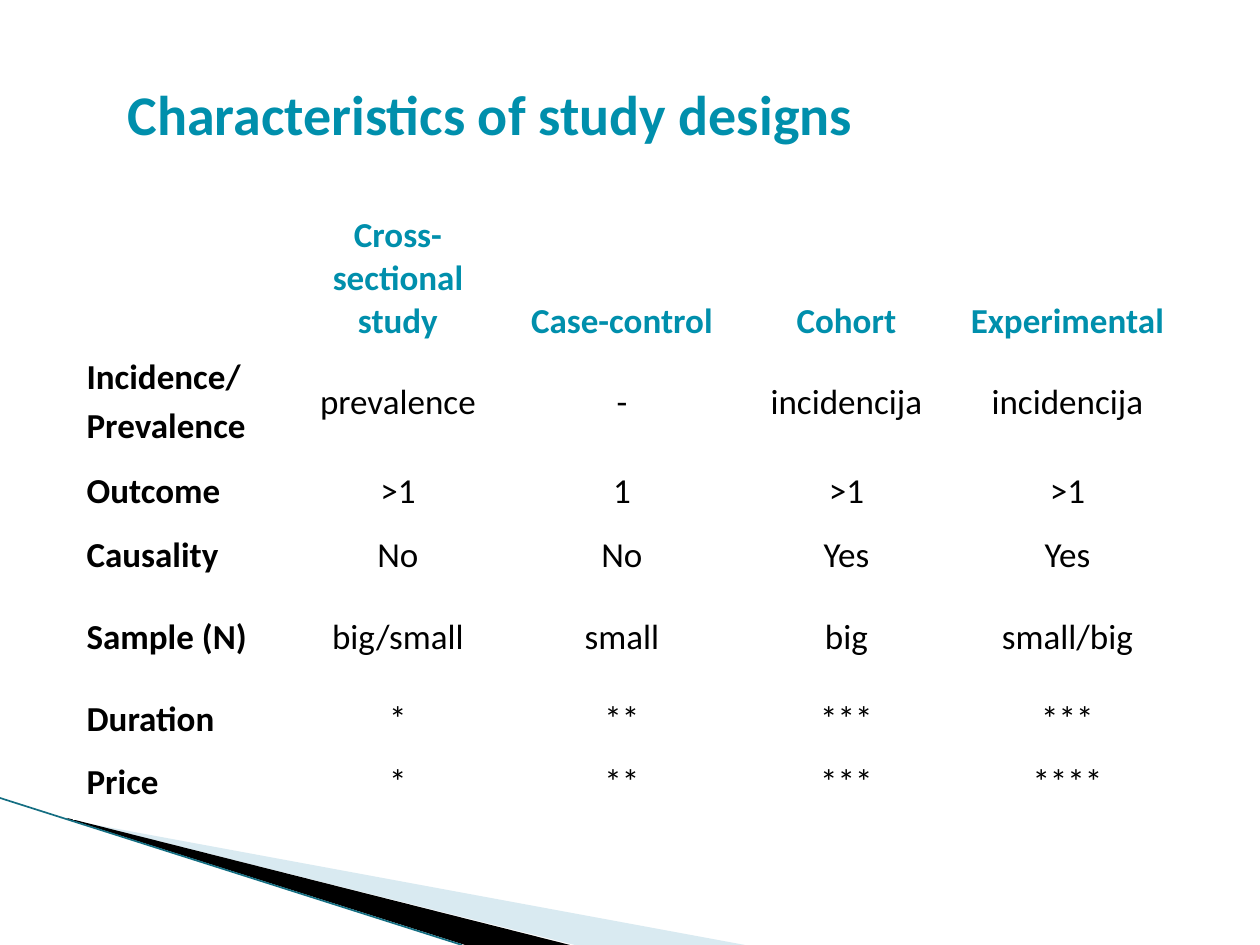
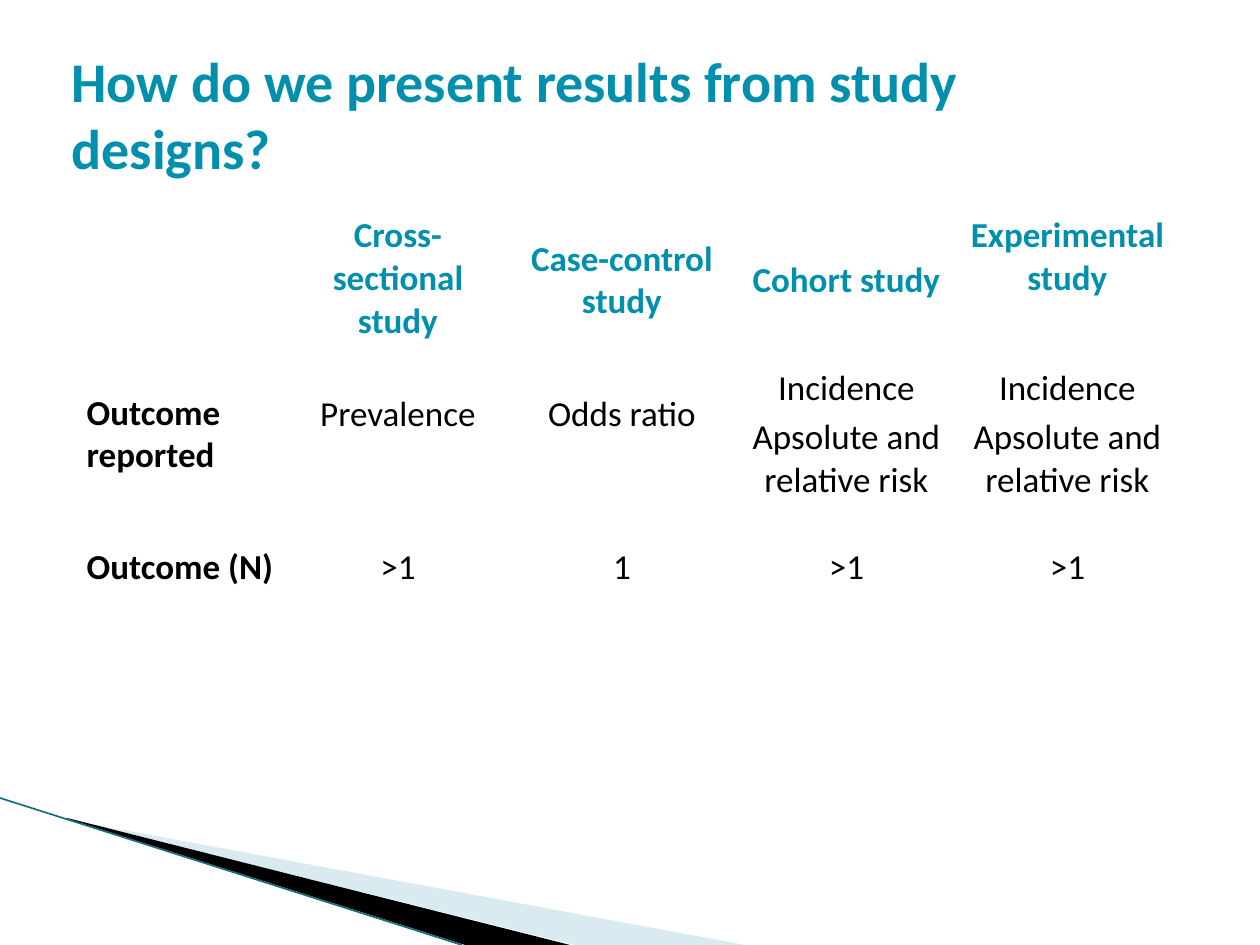
import pptx
import pptx.util
import pptx.dml.color
import pptx.enum.shapes
import pptx.enum.text
import pptx.oxml
import pptx.oxml.ns
import lxml.etree

RGB = pptx.dml.color.RGBColor
Pt = pptx.util.Pt
ANCHOR = pptx.enum.text.MSO_ANCHOR
ALIGN = pptx.enum.text.PP_ALIGN
qn = pptx.oxml.ns.qn

TEAL = RGB(0x00, 0x8F, 0xAC)
DARK_TEAL = RGB(0x14, 0x6E, 0x82)
PALE_BLUE = RGB(0xA0, 0xCB, 0xDC)
BLACK = RGB(0, 0, 0)
WHITE = RGB(0xFF, 0xFF, 0xFF)
FONT = "Calibri"
SCALE = 914400 / 126  # EMU in one px

# Content: a newline inside a cell starts a new paragraph
TOP, MID, BOTTOM = ANCHOR.TOP, ANCHOR.MIDDLE, ANCHOR.BOTTOM
RISK = "Incidence\nApsolute and relative risk"
SLIDES = [
    dict(
        title="Characteristics of study designs",
        title_box=(115, 55, 1022, 117),
        header_anchors=[BOTTOM] * 5,
        row_heights=[132, 113, 66, 63, 101, 62, 64],
        raised_cells=[],
        last_border=3,
        rows=[
            ["", "Cross-sectional study", "Case-control", "Cohort", "Experimental"],
            ["Incidence/\nPrevalence", "prevalence", "-", "incidencija", "incidencija"],
            ["Outcome", ">1", "1", ">1", ">1"],
            ["Causality", "No", "No", "Yes", "Yes"],
            ["Sample (N)", "big/small", "small", "big", "small/big"],
            ["Duration", "*", "**", "***", "***"],
            ["Price", "*", "**", "***", "****"],
        ],
    ),
    dict(
        title="How do we present results from study designs?",
        title_box=(59, 55, 1123, 117),
        header_anchors=[TOP, TOP, MID, MID, TOP],
        row_heights=[139, 169, 98],
        raised_cells=[(1, 1), (1, 2)],
        last_border=2.25,
        rows=[
            ["", "Cross-sectional study", "Case-control study", "Cohort study",
             "Experimental study"],
            ["Outcome reported", "Prevalence", "Odds ratio", RISK, RISK],
            ["Outcome (N)", ">1", "1", ">1", ">1"],
        ],
    ),
]
TABLE_LEFT, TABLE_TOP = 74, 214
COL_WIDTHS = [214, 220, 228, 221, 221]
BORDER = 2.25

# Corner sweep: outline, colour, opacity in percent
SWEEPS = [
    ([(69, 820), (745, 945), (575, 945), (69, 819)], PALE_BLUE, 40),
    ([(67, 818), (570, 945), (465, 945), (68, 819)], BLACK, 100),
]
SWEEP_EDGE = (0, 798, 462, 945)


def px(n):
    return round(n * SCALE)


def set_font(p, size, color, bold):
    p.font.name, p.font.size, p.font.bold = FONT, Pt(size), bold
    p.font.color.rgb = color


def draw_sweep(s, layout):
    """Draw the corner sweep and move it to the layout all slides share."""
    parts = []
    for points, color, opacity in SWEEPS:
        builder = s.shapes.build_freeform(*points[0], scale=SCALE)
        builder.add_line_segments(points[1:], close=True)
        sp = builder.convert_to_shape()
        sp.shadow.inherit = False
        sp.line.fill.background()
        sp.fill.solid()
        sp.fill.fore_color.rgb = color
        if opacity < 100:
            clr = sp.element.spPr.find(".//" + qn("a:srgbClr"))
            lxml.etree.SubElement(clr, qn("a:alpha"), val=str(opacity * 1000))
        parts.append(sp)
    edge = s.shapes.add_connector(pptx.enum.shapes.MSO_CONNECTOR.STRAIGHT,
                                  *map(px, SWEEP_EDGE))
    edge.line.color.rgb = DARK_TEAL
    edge.line.width = Pt(0.95)
    lxml.etree.SubElement(edge.element.spPr, qn("a:effectLst"))
    parts.append(edge)
    tree = layout.placeholders[0].element.getparent()
    for part in parts:
        tree.append(part.element)


def add_title(s, text, box):
    sp = s.shapes.title
    sp.left, sp.top, sp.width, sp.height = map(px, box)
    tf = sp.text_frame
    tf.word_wrap = True
    tf.vertical_anchor = MID
    tf.margin_right = px(25)
    tf.text = text
    p = tf.paragraphs[0]
    p.alignment = ALIGN.LEFT
    set_font(p, 32, TEAL, True)


def set_border(cell, side, width):
    ln = lxml.etree.SubElement(cell._tc.get_or_add_tcPr(), qn("a:" + side),
                               w=str(Pt(width)))
    fill = lxml.etree.SubElement(ln, qn("a:solidFill"))
    lxml.etree.SubElement(fill, qn("a:srgbClr"), val=str(WHITE))


def fill_cell(cell, text, header, label):
    cell.margin_left = cell.margin_right = px(12.6)
    cell.margin_top, cell.margin_bottom = 0, px(6)
    cell.text = text
    for i, p in enumerate(cell.text_frame.paragraphs):
        p.alignment = ALIGN.LEFT if label else ALIGN.CENTER
        if i:
            p.space_before = Pt(4)
        set_font(p, 20, TEAL if header else BLACK, header or label)


def add_table(s, spec_):
    rows, heights = spec_["rows"], spec_["row_heights"]
    frame = s.shapes.add_table(len(rows), len(COL_WIDTHS), px(TABLE_LEFT), px(TABLE_TOP),
                               px(sum(COL_WIDTHS)), px(sum(heights)))
    table = frame.table
    table.first_row = table.horz_banding = False
    for col, width in zip(table.columns, COL_WIDTHS):
        col.width = px(width)
    for r, texts in enumerate(rows):
        table.rows[r].height = px(heights[r])
        for c, text in enumerate(texts):
            cell = table.cell(r, c)
            fill_cell(cell, text, r == 0, c == 0)
            cell.vertical_anchor = MID if r else spec_["header_anchors"][c]
            if (r, c) in spec_["raised_cells"]:
                cell.margin_bottom = px(46)
            set_border(cell, "lnT", BORDER)
            set_border(cell, "lnB", spec_["last_border"] if r == len(rows) - 1 else BORDER)
            cell.fill.background()


def main():
    prs = pptx.Presentation()
    prs.slide_width, prs.slide_height = px(1260), px(945)
    layout = prs.slide_layouts.get_by_name("Title Only")
    for i, content in enumerate(SLIDES):
        s = prs.slides.add_slide(layout)
        if i == 0:
            draw_sweep(s, layout)
        add_title(s, content["title"], content["title_box"])
        add_table(s, content)
    prs.save("out.pptx")


if __name__ == "__main__":
    main()
